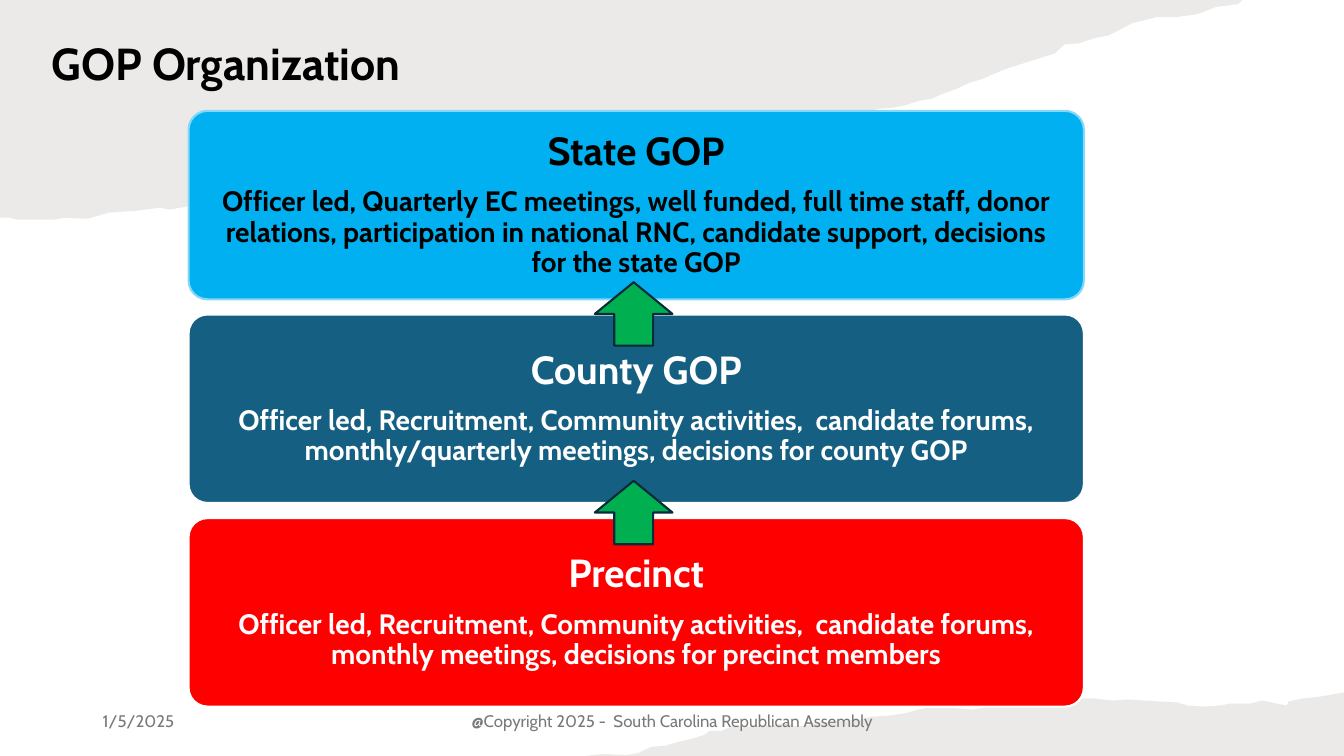
from dataclasses import dataclass

from pptx import Presentation
from pptx.dml.color import RGBColor
from pptx.enum.shapes import MSO_SHAPE
from pptx.enum.text import MSO_ANCHOR, MSO_AUTO_SIZE, PP_ALIGN
from pptx.util import Inches, Pt

ROUNDED = MSO_SHAPE.ROUNDED_RECTANGLE
UP_ARROW = MSO_SHAPE.UP_ARROW
TOP, MIDDLE = MSO_ANCHOR.TOP, MSO_ANCHOR.MIDDLE
NO_AUTOFIT = MSO_AUTO_SIZE.NONE
LEFT, CENTER = PP_ALIGN.LEFT, PP_ALIGN.CENTER
TITLE_ONLY = 5


@dataclass(frozen=True)
class Theme:
    """Colours, font and type sizes of the slide."""
    font: str = "Cabin"
    paper: str = "ECEAE9"
    black: str = "000000"
    white: str = "FFFFFF"
    state: str = "00B0F0"
    state_edge: str = "85D8F8"
    county: str = "156082"
    precinct: str = "FF0000"
    arrow: str = "00B050"
    arrow_edge: str = "092A39"
    footer: str = "797979"
    title_size: int = 32
    tier_size: int = 28
    detail_size: int = 20
    footer_size: int = 12


THEME = Theme()

TIERS = [
    ("State GOP",
     "Officer led, Quarterly EC meetings, well funded, full time staff, donor relations, "
     "participation in national RNC, candidate support, decisions for the state GOP",
     THEME.state, THEME.state_edge, THEME.black),
    ("County GOP",
     "Officer led, Recruitment, Community activities,  candidate forums, "
     "monthly/quarterly meetings, decisions for county GOP",
     THEME.county, THEME.white, THEME.white),
    ("Precinct",
     "Officer led, Recruitment, Community activities,  candidate forums, "
     "monthly meetings, decisions for precinct members",
     THEME.precinct, THEME.white, THEME.white),
]
TIER_TOP, TIER_PITCH = 1.1, 2.02
ARROW_TOP, ARROW_PITCH = 2.8, 1.97

UPPER_PAPER = [
    (0, 0), (12.32, 0), (12.28, 0.04), (12.06, 0.07), (11.88, 0.14), (11.66, 0.17),
    (11.47, 0.17), (11.23, 0.23), (11, 0.35), (10.85, 0.38), (10.7, 0.43),
    (10.56, 0.44), (10.46, 0.53), (10.02, 0.67), (9.91, 0.71), (9.75, 0.78),
    (9.62, 0.82), (9.49, 0.88), (9.35, 0.93), (9.24, 0.98), (9.12, 1), (8.96, 1.05),
    (8.84, 1.07), (8.7, 1.08), (8.61, 1.12), (8.47, 1.13), (8.39, 1.16), (8.26, 1.25),
    (8.16, 1.3), (8, 1.34), (7.86, 1.37), (7.75, 1.42), (7.61, 1.46), (7.36, 1.55),
    (7.24, 1.57), (7.13, 1.65), (6.98, 1.7), (6.86, 1.77), (6.7, 1.8), (6.52, 1.81),
    (6.3, 1.84), (6.1, 1.84), (5.96, 1.89), (5.64, 1.92), (5.58, 1.95), (5.32, 2.02),
    (5.02, 2.05), (4.78, 2.08), (4.65, 2.08), (4.54, 2.05), (4.31, 2.04), (4.18, 2.03),
    (3.9, 2.02), (3.87, 1.99), (3.68, 1.96), (3.47, 2), (3.32, 2.02), (3.24, 1.99),
    (3.12, 1.98), (2.91, 1.96), (2.75, 1.92), (2.66, 1.94), (2.57, 1.92), (2.43, 1.96),
    (2.27, 1.98), (2.13, 2.03), (2.01, 2.02), (1.79, 2.06), (1.68, 2.08), (1.59, 2.06),
    (1.36, 2.09), (1.08, 2.11), (0.87, 2.17), (0.64, 2.16), (0.53, 2.18), (0.41, 2.18),
    (0.17, 2.18), (0.1, 2.16), (0, 2.16),
]
LOWER_PAPER = [
    (13.33, 6.87), (13.33, 7.5), (5.8, 7.5), (5.99, 7.48), (6.22, 7.49), (6.33, 7.47),
    (6.46, 7.41), (6.59, 7.4), (6.73, 7.36), (6.86, 7.33), (6.99, 7.29), (7.04, 7.25),
    (7.16, 7.25), (7.27, 7.2), (7.4, 7.21), (7.7, 7.19), (7.78, 7.17), (7.91, 7.21),
    (8.03, 7.19), (8.06, 7.17), (8.38, 7.15), (8.53, 7.14), (8.64, 7.11), (8.82, 7.1),
    (9.01, 7.07), (9.1, 7.04), (9.22, 7.02), (9.4, 7.02), (9.64, 7.04), (9.77, 7.02),
    (9.93, 6.98), (10.08, 6.98), (10.19, 6.99), (10.33, 6.99), (10.49, 6.97),
    (10.72, 6.93), (10.85, 6.93), (11.04, 6.95), (11.18, 6.94), (11.35, 6.95),
    (11.68, 6.97), (11.78, 7), (11.92, 7.01), (12.1, 7), (12.2, 6.98), (12.4, 6.98),
    (12.52, 6.95), (12.76, 7), (12.78, 6.96), (12.92, 6.93), (13.1, 6.91),
]


def apply_formats(target, formats):
    """Set each named attribute of the target."""
    for name, value in formats.items():
        setattr(target, name, value)


def paint(shape, fill, edge=None):
    """Give a shape a flat fill and an optional outline."""
    shape.shadow.inherit = False
    shape.fill.solid()
    shape.fill.fore_color.rgb = RGBColor.from_string(fill)
    if edge:
        shape.line.color.rgb = RGBColor.from_string(edge)
        shape.line.width = Pt(1.5)
    else:
        shape.line.fill.background()


def write(paragraph, wording, size, color, bold=False, **layout):
    """Fill a paragraph with one formatted run."""
    apply_formats(paragraph, layout)
    run = paragraph.add_run()
    run.text = wording
    apply_formats(run.font, {"name": THEME.font, "size": Pt(size), "bold": bold})
    run.font.color.rgb = RGBColor.from_string(color)


def add_paper(slide, outline):
    """Draw a torn-paper area from its outline."""
    start, *rest = [(Inches(x), Inches(y)) for x, y in outline]
    builder = slide.shapes.build_freeform(*start)
    builder.add_line_segments(rest, close=True)
    paint(builder.convert_to_shape(), THEME.paper)


def add_title(slide, wording):
    """Place the title above the paper areas."""
    title = slide.shapes.title
    apply_formats(title, {"left": Inches(0.41), "top": Inches(0.3),
                          "width": Inches(6.99), "height": Inches(0.64)})
    apply_formats(title.text_frame, {"vertical_anchor": TOP, "auto_size": NO_AUTOFIT})
    write(title.text_frame.paragraphs[0], wording, THEME.title_size, THEME.black,
          bold=True, alignment=LEFT)
    title.element.getparent().append(title.element)


def add_tier(slide, top, name, duties, fill, edge, ink):
    """Draw one level of the organization with its duties."""
    tier = slide.shapes.add_shape(ROUNDED, Inches(1.87), Inches(top),
                                  Inches(8.88), Inches(1.87))
    tier.adjustments[0] = 0.1
    paint(tier, fill, edge)
    frame = tier.text_frame
    margins = ("margin_left", "margin_top", "margin_right", "margin_bottom")
    apply_formats(frame, dict.fromkeys(margins, Inches(0.12)))
    apply_formats(frame, {"word_wrap": True, "vertical_anchor": MIDDLE})
    lines = [(frame.paragraphs[0], name, THEME.tier_size),
             (frame.add_paragraph(), duties, THEME.detail_size)]
    for paragraph, wording, size in lines:
        write(paragraph, wording, size, ink, bold=True, alignment=CENTER,
              line_spacing=0.9, space_after=Pt(0.35 * size))


def add_arrow(slide, top):
    """Draw an arrow up to the next level."""
    arrow = slide.shapes.add_shape(UP_ARROW, Inches(5.9), Inches(top),
                                   Inches(0.77), Inches(0.63))
    paint(arrow, THEME.arrow, THEME.arrow_edge)


def add_footer(slide, left, width, wording, alignment):
    """Write one part of the footer line."""
    footer = slide.shapes.add_textbox(Inches(left), Inches(6.95), Inches(width), Inches(0.4))
    apply_formats(footer.text_frame, {"word_wrap": True, "vertical_anchor": MIDDLE})
    write(footer.text_frame.paragraphs[0], wording, THEME.footer_size, THEME.footer,
          alignment=alignment)


def main():
    """Build the slide and save it."""
    deck = Presentation()
    apply_formats(deck, {"slide_width": Inches(13.33), "slide_height": Inches(7.5)})
    slide = deck.slides.add_slide(deck.slide_layouts[TITLE_ONLY])
    for outline in (UPPER_PAPER, LOWER_PAPER):
        add_paper(slide, outline)
    add_title(slide, "GOP Organization")
    for level, tier in enumerate(TIERS):
        add_tier(slide, TIER_TOP + level * TIER_PITCH, *tier)
    for level in range(len(TIERS) - 1):
        add_arrow(slide, ARROW_TOP + level * ARROW_PITCH)
    add_footer(slide, 0.92, 3, "1/5/2025", LEFT)
    add_footer(slide, 4.42, 4.5, "@Copyright 2025 -  South Carolina Republican Assembly", CENTER)
    deck.save("out.pptx")


if __name__ == "__main__":
    main()
